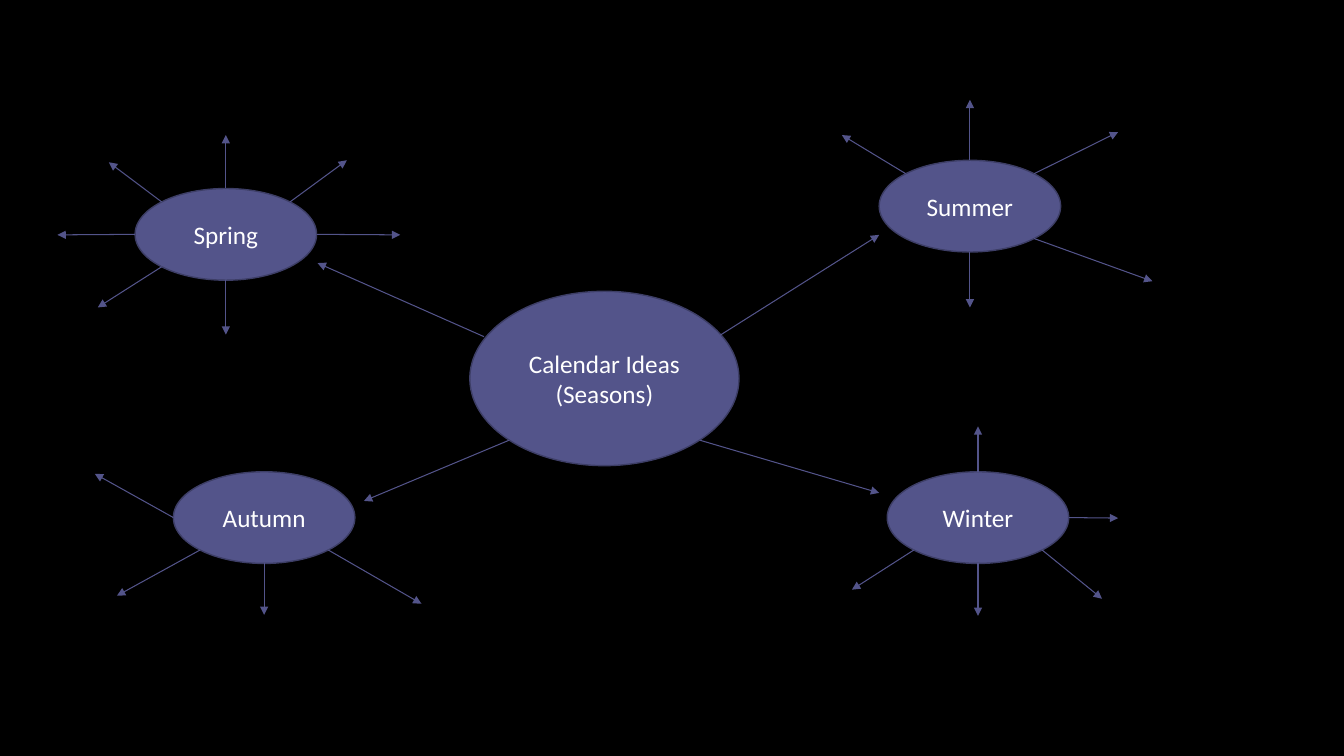
from math import cos, radians, sin

from lxml.etree import SubElement
from pptx import Presentation
from pptx.dml.color import RGBColor
from pptx.enum.shapes import MSO_CONNECTOR, MSO_SHAPE
from pptx.enum.text import MSO_ANCHOR, PP_ALIGN
from pptx.oxml.ns import qn
from pptx.util import Inches, Pt

BACKGROUND, BUBBLE, OUTLINE, LABEL = "000000", "53548A", "3D3E66", "FFFFFF"

# Connection sites of an ellipse, counterclockwise from the top
(TOP, TOP_LEFT, LEFT, BOTTOM_LEFT,
 BOTTOM, BOTTOM_RIGHT, RIGHT, TOP_RIGHT) = range(8)

SEASON_SIZE = (1.8, 0.91)
# Season: left, top, and the arrow tip for each connection site
SEASONS = {
    "Spring": (1.34, 1.87, {
        TOP: (2.24, 1.34), TOP_RIGHT: (3.44, 1.59), TOP_LEFT: (1.08, 1.61),
        RIGHT: (3.97, 2.33), LEFT: (0.57, 2.33),
        BOTTOM_LEFT: (0.97, 3.05), BOTTOM: (2.24, 3.32)}),
    "Autumn": (1.72, 4.68, {
        BOTTOM_LEFT: (1.16, 5.91), BOTTOM: (2.62, 6.1),
        BOTTOM_RIGHT: (4.18, 5.99), LEFT: (0.94, 4.7)}),
    "Winter": (8.8, 4.68, {
        BOTTOM_RIGHT: (10.93, 5.94), RIGHT: (11.09, 5.14),
        BOTTOM: (9.7, 6.11), TOP: (9.7, 4.23), BOTTOM_LEFT: (8.45, 5.85)}),
    "Summer": (8.72, 1.59, {
        TOP_RIGHT: (11.09, 1.31), BOTTOM_RIGHT: (11.43, 2.79),
        BOTTOM: (9.62, 3.05), TOP: (9.62, 0.99), TOP_LEFT: (8.35, 1.34)}),
}


def color(hex_code):
    return RGBColor.from_string(hex_code)


def add_bubble(slide, text, left, top, width, height):
    bubble = slide.shapes.add_shape(
        MSO_SHAPE.OVAL, Inches(left), Inches(top), Inches(width), Inches(height))
    bubble.shadow.inherit = False
    bubble.fill.solid()
    bubble.fill.fore_color.rgb = color(BUBBLE)
    bubble.line.color.rgb = color(OUTLINE)
    bubble.line.width = Pt(1)
    frame = bubble.text_frame
    frame.word_wrap = True
    frame.vertical_anchor = MSO_ANCHOR.MIDDLE
    frame.text = text
    for paragraph in frame.paragraphs:
        paragraph.alignment = PP_ALIGN.CENTER
        paragraph.font.name = "Calibri"
        paragraph.font.size = Pt(18)
        paragraph.font.color.rgb = color(LABEL)
    return bubble


def add_arrow(slide, start, tip):
    """Draw an arrow between two points given in inches."""
    arrow = slide.shapes.add_connector(
        MSO_CONNECTOR.STRAIGHT, *(Inches(value) for value in (*start, *tip)))
    arrow.line.color.rgb = color(BUBBLE)
    arrow.line.width = Pt(0.75)
    SubElement(arrow.line._get_or_add_ln(), qn("a:tailEnd"), type="triangle")
    SubElement(arrow._element.spPr, qn("a:effectLst"))
    return arrow


def add_ray(slide, bubble, site, tip):
    """Draw an arrow joined to one of a bubble's eight connection sites."""
    angle = radians(90 + 45 * site)
    radius_x, radius_y = bubble.width.inches / 2, bubble.height.inches / 2
    start = (bubble.left.inches + radius_x * (1 + cos(angle)),
             bubble.top.inches + radius_y * (1 - sin(angle)))
    ray = add_arrow(slide, start, tip)
    # begin_connect only knows the four sites of a rectangle
    SubElement(ray._element.nvCxnSpPr.cNvCxnSpPr, qn("a:stCxn"),
               id=str(bubble.shape_id), idx=str(site))


def main():
    presentation = Presentation()
    presentation.slide_width = Inches(13.33)
    presentation.slide_height = Inches(7.5)
    slide = presentation.slides.add_slide(presentation.slide_layouts[6])
    slide.background.fill.solid()
    slide.background.fill.fore_color.rgb = color(BACKGROUND)

    hub = add_bubble(slide, "Calendar Ideas\n(Seasons)", 4.66, 2.89, 2.67, 1.73)
    add_arrow(slide, (7.12, 3.34), (8.72, 2.33))
    add_arrow(slide, (4.8, 3.34), (3.15, 2.61))
    add_ray(slide, hub, BOTTOM_LEFT, (3.61, 4.97))
    add_ray(slide, hub, BOTTOM_RIGHT, (8.72, 4.89))

    for season, (left, top, tips) in SEASONS.items():
        bubble = add_bubble(slide, season, left, top, *SEASON_SIZE)
        for site, tip in tips.items():
            add_ray(slide, bubble, site, tip)

    presentation.save("out.pptx")


if __name__ == "__main__":
    main()
